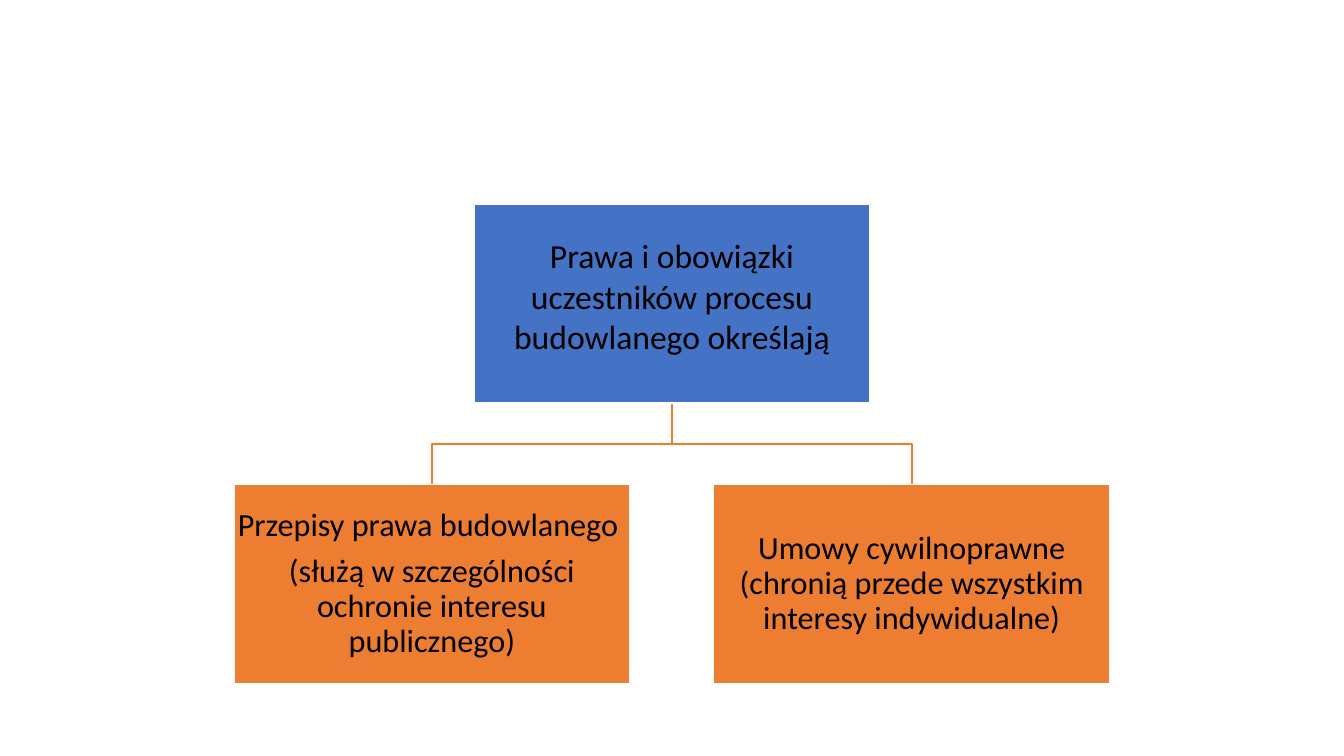
from dataclasses import dataclass

from pptx import Presentation
from pptx.dml.color import RGBColor
from pptx.enum.shapes import MSO_SHAPE
from pptx.enum.text import MSO_ANCHOR, PP_ALIGN
from pptx.util import Inches, Pt


@dataclass(frozen=True)
class Theme:
    """Colours, font and type sizes of the slide."""
    root: RGBColor = RGBColor(0x44, 0x72, 0xC4)
    branch: RGBColor = RGBColor(0xED, 0x7D, 0x31)
    border: RGBColor = RGBColor(0xFF, 0xFF, 0xFF)
    text: RGBColor = RGBColor(0, 0, 0)
    font: str = "Calibri"
    root_size: int = 24
    branch_size: int = 23


THEME = Theme()
ROOT = "Prawa i obowiązki uczestników procesu budowlanego określają"
BRANCHES = [
    ["Przepisy prawa budowlanego ",
     "(służą w szczególności ochronie interesu publicznego)"],
    ["Umowy cywilnoprawne (chronią przede wszystkim interesy indywidualne)"],
]


def add_node(s, box, paragraphs, fill, size, spacing=1.0, bottom=0.02):
    """Draw one bordered box with centred paragraphs."""
    sp = s.shapes.add_shape(MSO_SHAPE.RECTANGLE, *map(Inches, box))
    sp.shadow.inherit = False
    sp.fill.solid()
    sp.fill.fore_color.rgb = fill
    sp.line.color.rgb = THEME.border
    sp.line.width = Pt(1)
    tf = sp.text_frame
    tf.word_wrap = True
    tf.vertical_anchor = MSO_ANCHOR.MIDDLE
    tf.margin_left = tf.margin_right = tf.margin_top = Inches(0.02)
    tf.margin_bottom = Inches(bottom)
    for i, text in enumerate(paragraphs):
        p = tf.paragraphs[0] if i == 0 else tf.add_paragraph()
        p.text = text
        p.alignment = PP_ALIGN.CENTER
        p.line_spacing = spacing
        p.space_after = Pt(8 if i < len(paragraphs) - 1 else 0)
        p.font.name = THEME.font
        p.font.size = Pt(size)
        p.font.color.rgb = THEME.text


def add_link(s, x1, y1, x2, y2):
    """Draw the bent line from the root down to one branch."""
    mid = (y1 + y2) / 2
    builder = s.shapes.build_freeform(Inches(x1), Inches(y1))
    points = [(x1, mid), (x2, mid), (x2, y2)]
    builder.add_line_segments(
        [(Inches(x), Inches(y)) for x, y in points], close=False)
    sp = builder.convert_to_shape()
    sp.shadow.inherit = False
    sp.fill.background()
    sp.line.color.rgb = THEME.branch
    sp.line.width = Pt(1)


def add_hierarchy(s, left, top, width, height):
    """Place the root over its evenly spread branches inside the box."""
    node_w, node_h = 3.93, 1.97
    center = left + width / 2
    branch_top = top + height - node_h
    step = (width - node_w) / (len(BRANCHES) - 1)
    lefts = [left + i * step for i in range(len(BRANCHES))]
    for x in reversed(lefts):
        add_link(s, center, top + node_h, x + node_w / 2, branch_top)
    add_node(s, (center - node_w / 2, top, node_w, node_h), [ROOT],
             THEME.root, THEME.root_size, bottom=0.18)
    for x, paragraphs in zip(lefts, BRANCHES):
        add_node(s, (x, branch_top, node_w, node_h), paragraphs,
                 THEME.branch, THEME.branch_size, spacing=0.9)


def main():
    """Build and save the presentation."""
    prs = Presentation()
    prs.slide_width, prs.slide_height = Inches(13.33), Inches(7.5)
    s = prs.slides.add_slide(prs.slide_layouts[6])
    add_hierarchy(s, 2.32, 2.03, 8.69, 4.75)
    prs.save("out.pptx")


if __name__ == "__main__":
    main()
